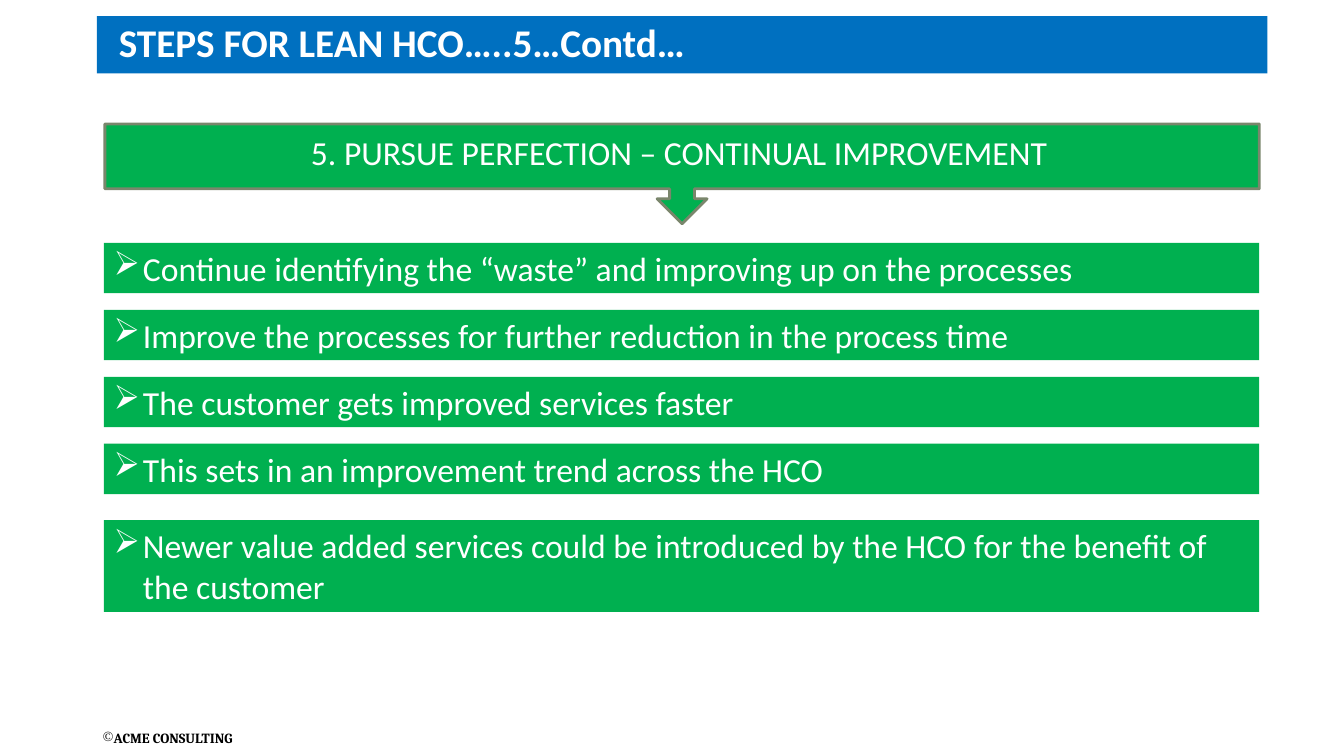
"""Build the slide on step five of a lean HCO."""
from lxml.etree import SubElement
from pptx import Presentation
from pptx.dml.color import RGBColor
from pptx.enum.shapes import MSO_SHAPE
from pptx.enum.text import MSO_ANCHOR, PP_ALIGN
from pptx.oxml.ns import qn
from pptx.util import Inches, Pt

BLUE, GREEN, OLIVE, WHITE, BLACK = "0070C0", "00B050", "7A866C", "FFFFFF", "000000"
BAR_HEIGHT, BAR_PITCH = 0.5, 0.664
STEPS = [
    "Continue identifying the “waste” and improving up on the processes",
    "Improve the processes for further reduction in the process time",
    "The customer gets improved services faster",
    "This sets in an improvement trend across the HCO",
]
LAST_STEP = ("Newer value added services could be introduced by the HCO "
             "for the benefit of the customer")


def color(hex_code):
    """Return the colour for a hex string."""
    return RGBColor.from_string(hex_code)


def add_block(slide, box, fill, line=None, kind=MSO_SHAPE.RECTANGLE):
    """Add a flat filled shape, outlined only when a line colour is given."""
    block = slide.shapes.add_shape(kind, *map(Inches, box))
    block.shadow.inherit = False
    block.fill.solid()
    block.fill.fore_color.rgb = color(fill)
    if line:
        block.line.color.rgb = color(line)
        block.line.width = Pt(2)
    else:
        block.line.fill.background()
    return block


def add_label(slide, box):
    """Add an empty text box."""
    return slide.shapes.add_textbox(*map(Inches, box))


def write(shape, text, size, font_color=WHITE, font="Calibri", bold=False,
          align=PP_ALIGN.LEFT, bullet=None, indent=0, wrap=True):
    """Write one paragraph into a shape, with an optional bullet."""
    frame = shape.text_frame
    frame.word_wrap = wrap
    frame.vertical_anchor = MSO_ANCHOR.TOP
    paragraph = frame.paragraphs[0]
    paragraph.text = text
    paragraph.alignment = align
    if bullet:
        properties = paragraph._p.get_or_add_pPr()
        properties.set("marL", str(Inches(indent)))
        properties.set("indent", str(-Inches(indent)))
        SubElement(properties, qn("a:buChar")).set("char", bullet)
    paragraph.font.name = font
    paragraph.font.size = Pt(size)
    paragraph.font.bold = bold
    paragraph.font.color.rgb = color(font_color)


def add_title(slide, left, top, width, height):
    """Draw the blue title band and its heading."""
    add_block(slide, (left, top, width, height), BLUE)
    heading = add_label(slide, (left + 0.12, top - 0.03, 5.88, height))
    write(heading, "STEPS FOR LEAN HCO…..5…Contd…", 28, bold=True, wrap=False)


def add_callout(slide, left, top, width, height):
    """Draw the callout naming the step, pointing down to its actions."""
    add_block(slide, (left, top, width, height), GREEN, OLIVE,
              MSO_SHAPE.DOWN_ARROW_CALLOUT)
    step_name = add_label(slide, (left + 1.2, top + 0.03, width - 2.46, 0.5))
    write(step_name, "5. PURSUE PERFECTION – CONTINUAL IMPROVEMENT", 24,
          align=PP_ALIGN.CENTER)


def add_steps(slide, left, top, width):
    """Stack the action bars, the last one two lines tall."""
    bars = [(text, row * BAR_PITCH, BAR_HEIGHT) for row, text in enumerate(STEPS)]
    bars.append((LAST_STEP, 2.75, 0.91))
    for text, offset, height in bars:
        bar = add_block(slide, (left, top + offset, width, height), GREEN)
        write(bar, text, 24, bullet="➢", indent=0.29)


def add_footer(slide, left, top, width, height):
    """Write the copyright line."""
    owner = add_label(slide, (left, top, width, height))
    write(owner, "ACME CONSULTING", 10, BLACK, "Cambria", True, bullet="©")


def main():
    """Build and save the slide."""
    deck = Presentation()
    deck.slide_width, deck.slide_height = Inches(13.33), Inches(7.5)
    slide = deck.slides.add_slide(deck.slide_layouts[6])
    add_footer(slide, 0.92, 7.19, 2.05, 0.27)
    add_title(slide, 0.96, 0.16, 11.61, 0.57)
    add_callout(slide, 1.04, 1.23, 11.45, 0.99)
    add_steps(slide, 1.03, 2.41, 11.46)
    deck.save("out.pptx")


if __name__ == "__main__":
    main()
